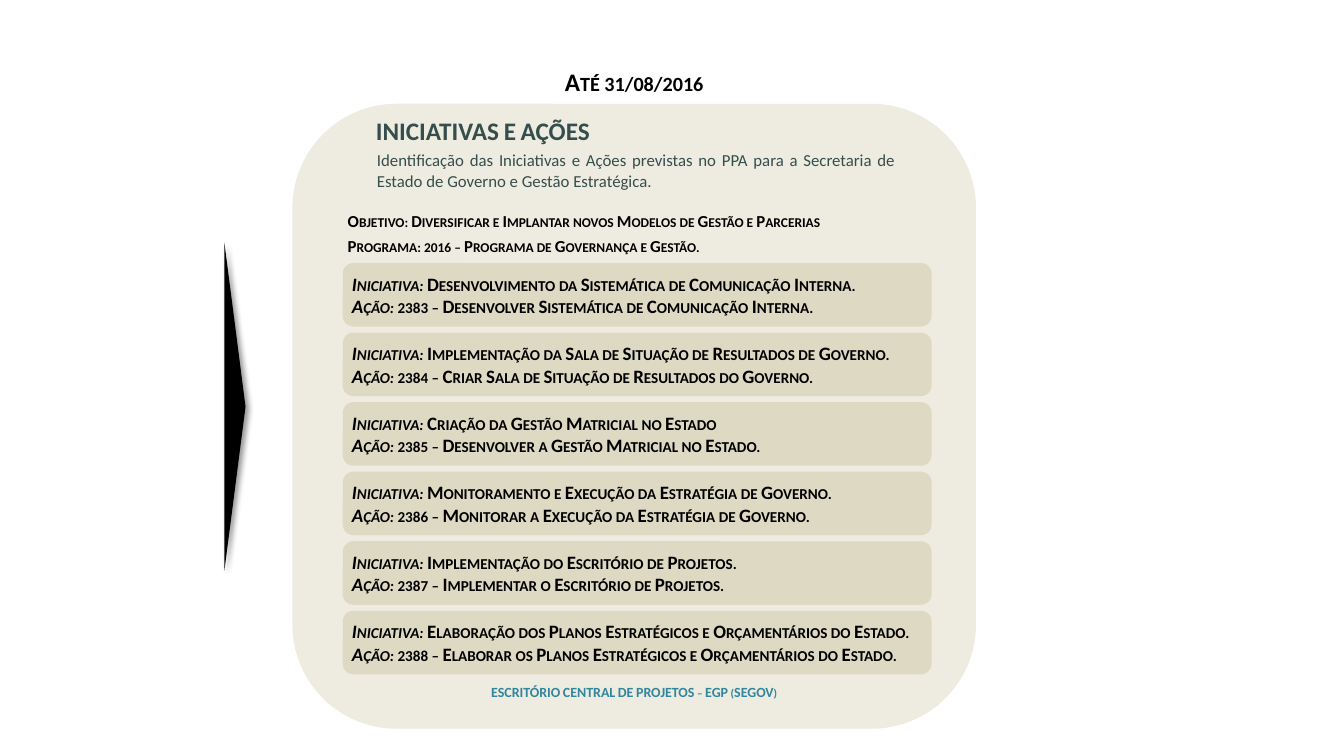
from lxml import etree
from pptx import Presentation
from pptx.dml.color import RGBColor
from pptx.enum import shapes, text
from pptx.oxml import ns
from pptx.util import Inches, Pt

COLOURS = {
    "panel": "EEECE1",
    "card": "DDD9C3",
    "black": "000000",
    "heading": "354D4C",
    "footer": "31859C",
}
FONT = "Calibri"
LEFT, CENTRE, JUSTIFY = (
    text.PP_ALIGN.LEFT, text.PP_ALIGN.CENTER, text.PP_ALIGN.JUSTIFY)

PANEL_LEFT, PANEL_WIDTH = 2.9, 6.78
CARD_TOP, CARD_STEP = 2.61, 0.69

INITIATIVES = [
    ("Desenvolvimento da Sistemática de Comunicação Interna.",
     "2383 – Desenvolver Sistemática de Comunicação Interna."),
    ("Implementação da Sala de Situação de Resultados de Governo.",
     "2384 – Criar Sala de Situação de Resultados do Governo."),
    ("Criação da Gestão Matricial no Estado",
     "2385 – Desenvolver a Gestão Matricial no Estado."),
    ("Monitoramento e Execução da Estratégia de Governo.",
     "2386 – Monitorar a Execução da Estratégia de Governo."),
    ("Implementação do Escritório de Projetos.",
     "2387 – Implementar o Escritório de Projetos."),
    ("Elaboração dos Planos Estratégicos e Orçamentários do Estado.",
     "2388 – Elaborar os Planos Estratégicos e Orçamentários do Estado."),
]


def rgb(name):
    return RGBColor.from_string(COLOURS[name])


def add_run(paragraph, words, size=12, colour="black", bold=True,
            italic=False, small_caps=True):
    run = paragraph.add_run()
    run.text = words
    font = run.font
    font.name, font.size = FONT, Pt(size)
    font.bold, font.italic = bold, italic
    font.color.rgb = rgb(colour)
    if small_caps:
        run._r.get_or_add_rPr().set("cap", "small")


def add_label(slide, box, words, align=LEFT, **run_format):
    frame = slide.shapes.add_textbox(*map(Inches, box)).text_frame
    frame.word_wrap = True
    paragraph = frame.paragraphs[0]
    paragraph.alignment = align
    add_run(paragraph, words, **run_format)


def add_block(slide, preset, box, fill):
    block = slide.shapes.add_shape(preset, *map(Inches, box))
    block.shadow.inherit = False
    block.fill.solid()
    block.fill.fore_color.rgb = rgb(fill)
    block.line.fill.background()
    return block


def add_card(slide, top, initiative, action):
    card = add_block(slide, shapes.MSO_SHAPE.ROUNDED_RECTANGLE,
                     (3.4, top, 5.84, 0.63), "card")
    frame = card.text_frame
    frame.word_wrap = True
    frame.vertical_anchor = text.MSO_ANCHOR.MIDDLE
    frame.margin_left = frame.margin_right = Inches(0.06)
    frame.margin_top = frame.margin_bottom = 0
    lines = [("Iniciativa: ", initiative), ("Ação: ", action)]
    for index, (caption, words) in enumerate(lines):
        paragraph = frame.add_paragraph() if index else frame.paragraphs[0]
        paragraph.alignment = JUSTIFY
        add_run(paragraph, caption, size=13.5, italic=True)
        add_run(paragraph, words, size=13.5)


def add_pointer(slide):
    pointer = add_block(slide, shapes.MSO_SHAPE.ISOSCELES_TRIANGLE,
                        (0.7, 3.93, 3.26, 0.21), "black")
    pointer.rotation = 90
    # Soft shadow towards the lower right
    effects = pointer._element.spPr.find(ns.qn("a:effectLst"))
    shadow = etree.SubElement(
        effects, ns.qn("a:outerShdw"), blurRad=str(Pt(4)), dist=str(Pt(3)),
        dir=str(45 * 60000), algn="tl", rotWithShape="0")
    shade = etree.SubElement(shadow, ns.qn("a:srgbClr"), val=COLOURS["black"])
    etree.SubElement(shade, ns.qn("a:alpha"), val="40000")


def main():
    deck = Presentation()
    deck.slide_width, deck.slide_height = Inches(13.33), Inches(7.5)
    slide = deck.slides.add_slide(deck.slide_layouts[6])

    # Panel with its date and heading
    add_block(slide, shapes.MSO_SHAPE.ROUNDED_RECTANGLE,
              (PANEL_LEFT, 1.03, PANEL_WIDTH, 6.2), "panel")
    add_label(slide, (PANEL_LEFT, 0.61, PANEL_WIDTH, 0.4), "Até 31/08/2016",
              align=CENTRE, size=18)
    add_label(slide, (3.63, 1.09, 3.4, 0.53), "INICIATIVAS E AÇÕES",
              size=18, colour="heading")
    add_label(slide, (3.64, 1.44, 5.34, 0.51),
              "Identificação das Iniciativas e Ações previstas no PPA para a "
              "Secretaria de Estado de Governo e Gestão Estratégica.",
              align=JUSTIFY, colour="heading", bold=False, small_caps=False)

    # Objective and programme
    add_label(slide, (3.35, 2.04, 5, 0.3),
              "Objetivo: Diversificar e Implantar novos Modelos de Gestão "
              "e Parcerias", align=JUSTIFY)
    add_label(slide, (3.35, 2.29, 5, 0.3),
              "Programa: 2016 – Programa de Governança e Gestão.",
              align=JUSTIFY)

    # Initiative cards
    for row, (initiative, action) in enumerate(INITIATIVES):
        add_card(slide, CARD_TOP + row * CARD_STEP, initiative, action)

    # Footer and side pointer
    add_label(slide, (PANEL_LEFT, 6.73, PANEL_WIDTH, 0.27),
              "ESCRITÓRIO CENTRAL DE PROJETOS – EGP (SEGOV)",
              align=CENTRE, size=10, colour="footer")
    add_pointer(slide)

    deck.save("out.pptx")


if __name__ == "__main__":
    main()
